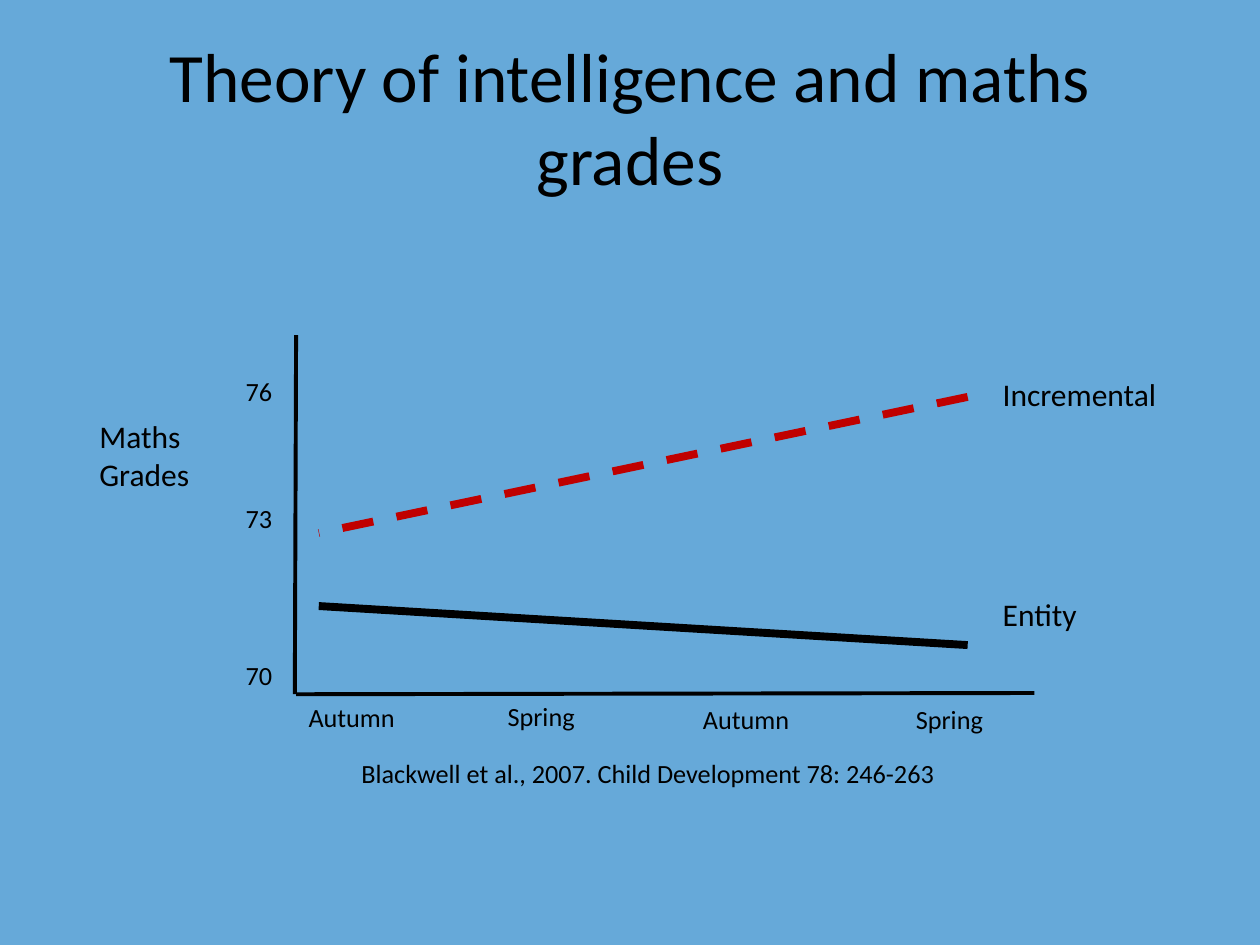
"""Build a slide on theory of intelligence and maths grades."""
from lxml import etree
from pptx import Presentation
from pptx.dml.color import RGBColor
from pptx.enum.dml import MSO_LINE
from pptx.enum.shapes import MSO_CONNECTOR
from pptx.enum.text import MSO_ANCHOR, MSO_AUTO_SIZE, PP_ALIGN
from pptx.oxml.ns import qn
from pptx.util import Inches, Pt

STRAIGHT = MSO_CONNECTOR.STRAIGHT
DASH = MSO_LINE.DASH
MIDDLE = MSO_ANCHOR.MIDDLE
FIT = MSO_AUTO_SIZE.SHAPE_TO_FIT_TEXT
NO_FIT = MSO_AUTO_SIZE.NONE
CENTER = PP_ALIGN.CENTER
FONT = "Calibri"
BLACK = "000000"
RED = "C00000"
SKY = "66A9D9"


def color(code):
    """Turn a hex string into a colour."""
    return RGBColor.from_string(code)


def style(para, size):
    """Set the font of a paragraph."""
    para.font.name = FONT
    para.font.size = Pt(size)
    para.font.color.rgb = color(BLACK)


def add_title(slide, text):
    """Fill and place the title."""
    title = slide.shapes.title
    title.left, title.top = Inches(0.5), Inches(0.3)
    title.width, title.height = Inches(9), Inches(1.25)
    frame = title.text_frame
    frame.text = text
    frame.auto_size = NO_FIT
    frame.vertical_anchor = MIDDLE
    frame.paragraphs[0].alignment = CENTER
    style(frame.paragraphs[0], 39.6)


def add_label(slide, text, left, top, width, height=0.35, size=15):
    """Add a text label that does not wrap."""
    box = slide.shapes.add_textbox(
        Inches(left), Inches(top), Inches(width), Inches(height))
    frame = box.text_frame
    frame.text = text
    frame.word_wrap = False
    frame.auto_size = FIT
    for para in frame.paragraphs:
        style(para, size)


def add_line(slide, start, end, width, code=BLACK, dash=None):
    """Add a straight line without a shadow."""
    line = slide.shapes.add_connector(
        STRAIGHT, *(Inches(n) for n in (*start, *end)))
    line.line.color.rgb = color(code)
    line.line.width = Pt(width)
    if dash:
        line.line.dash_style = dash
    etree.SubElement(line._element.spPr, qn("a:effectLst"))


def main():
    """Build and save the slide."""
    deck = Presentation()
    deck.slide_width, deck.slide_height = Inches(10), Inches(7.5)
    slide = deck.slides.add_slide(deck.slide_layouts[5])
    fill = slide.background.fill
    fill.solid()
    fill.fore_color.rgb = color(SKY)
    add_title(slide, "Theory of intelligence and maths grades")

    add_line(slide, (2.35, 2.66), (2.34, 5.51), 2.25)
    add_line(slide, (8.21, 5.5), (2.35, 5.51), 2.25)
    add_label(slide, "Maths\nGrades", 0.69, 3.26, 0.92, 0.71, 18)
    for grade, top in (("70", 5.18), ("73", 3.94), ("76", 2.93)):
        add_label(slide, grade, 1.85, top, 0.42)

    add_line(slide, (7.68, 5.12), (2.53, 4.81), 4.5)
    add_line(slide, (7.68, 3.15), (2.53, 4.23), 4.5, RED, DASH)
    for name, top, width in (("Incremental", 2.93, 1.43),
                             ("Entity", 4.67, 0.8)):
        add_label(slide, name, 7.86, top, width, 0.4, 18)

    for term, left, top, width in (("Autumn", 2.35, 5.52, 0.89),
                                   ("Autumn", 5.48, 5.53, 0.89),
                                   ("Spring", 3.93, 5.51, 0.74),
                                   ("Spring", 7.17, 5.53, 0.74)):
        add_label(slide, term, left, top, width)
    add_label(slide, "Blackwell et al., 2007. Child Development 78: 246-263",
              2.77, 5.96, 4.8)
    deck.save("out.pptx")


if __name__ == "__main__":
    main()
